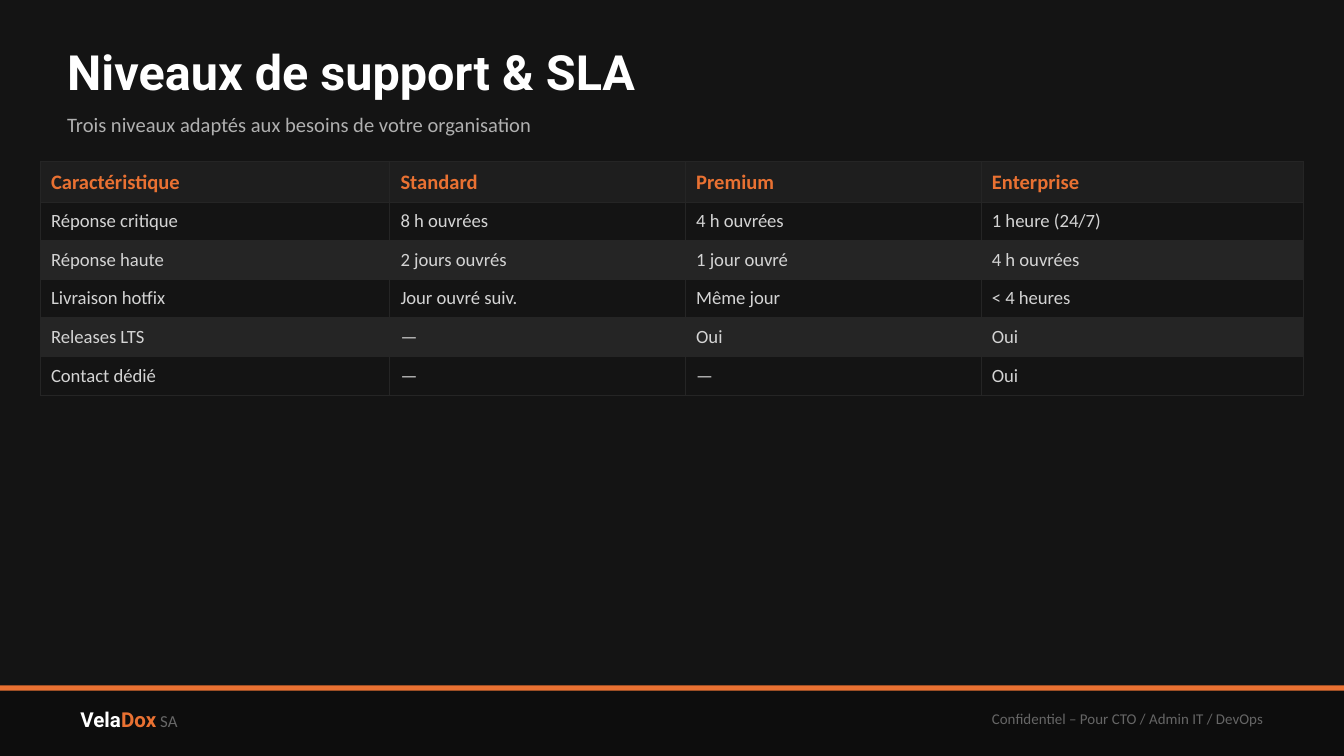
from dataclasses import dataclass

from lxml.etree import SubElement
from pptx import Presentation
from pptx.dml.color import RGBColor
from pptx.enum.shapes import MSO_SHAPE
from pptx.enum.text import MSO_ANCHOR, PP_ALIGN
from pptx.oxml.ns import qn
from pptx.util import Inches, Pt


@dataclass(frozen=True)
class Theme:
    heading: str = "Roboto"
    body: str = "Calibri"
    background: str = "141414"
    footer: str = "0D0D0D"
    header: str = "1E1E1E"
    band: str = "252525"
    accent: str = "E97132"
    white: str = "FFFFFF"
    text: str = "D4D4D4"
    subtitle: str = "B0B0B0"
    muted: str = "666666"
    title_size: float = 26
    lead_size: float = 11
    cell_size: float = 10
    suffix_size: float = 9
    note_size: float = 8
    border: float = 0.5


class SlideBuilder:
    def __init__(self, slide, theme):
        self.slide = slide
        self.theme = theme
        self.fill(slide.background, theme.background)

    def fill(self, target, color):
        target.fill.solid()
        target.fill.fore_color.rgb = RGBColor.from_string(color)

    def run(self, p, text, size, color, font=None, bold=False):
        r = p.add_run()
        r.text = text
        r.font.name = font or self.theme.body
        r.font.size = Pt(size)
        r.font.bold = bold
        r.font.color.rgb = RGBColor.from_string(color)

    def bar(self, top, height, color):
        sp = self.slide.shapes.add_shape(
            MSO_SHAPE.RECTANGLE, 0, Inches(top), Inches(WIDTH), Inches(height))
        sp.shadow.inherit = False
        self.fill(sp, color)
        sp.line.fill.background()

    def text(self, box, runs, align=PP_ALIGN.LEFT, flush=False):
        tf = self.slide.shapes.add_textbox(*map(Inches, box)).text_frame
        tf.word_wrap = True
        tf.vertical_anchor = MSO_ANCHOR.MIDDLE
        if flush:
            tf.margin_left = tf.margin_right = tf.margin_top = tf.margin_bottom = 0
        p = tf.paragraphs[0]
        p.alignment = align
        for run in runs:
            self.run(p, *run)

    def borders(self, cell):
        tc_pr = cell._tc.get_or_add_tcPr()
        for side in ("lnL", "lnR", "lnT", "lnB"):
            ln = SubElement(tc_pr, qn(f"a:{side}"), w=str(Pt(self.theme.border)))
            solid = SubElement(ln, qn("a:solidFill"))
            SubElement(solid, qn("a:srgbClr"), val=self.theme.band)

    def cell(self, cell, text, row):
        t = self.theme
        cell.margin_left = cell.margin_right = Inches(0.08)
        cell.margin_top = cell.margin_bottom = Inches(0.06)
        cell.vertical_anchor = MSO_ANCHOR.MIDDLE
        self.borders(cell)
        p = cell.text_frame.paragraphs[0]
        if row == 0:
            self.fill(cell, t.header)
            self.run(p, text, t.lead_size, t.accent, bold=True)
        else:
            self.fill(cell, t.background if row % 2 else t.band)
            self.run(p, text, t.cell_size, t.text)

    def table(self, left, top, widths, rows, header_height, row_height):
        heights = [header_height] + [row_height] * (len(rows) - 1)
        table = self.slide.shapes.add_table(
            len(rows), len(widths), Inches(left), Inches(top),
            Inches(sum(widths)), Inches(sum(heights))).table
        for column, width in zip(table.columns, widths):
            column.width = Inches(width)
        for i, (values, height) in enumerate(zip(rows, heights)):
            table.rows[i].height = Inches(height)
            for j, value in enumerate(values):
                self.cell(table.cell(i, j), value, i)


WIDTH = 10
HEIGHT = WIDTH * 9 / 16
FOOTER_TOP = 5.1
SLA_ROWS = [
    ("Caractéristique", "Standard", "Premium", "Enterprise"),
    ("Réponse critique", "8 h ouvrées", "4 h ouvrées", "1 heure (24/7)"),
    ("Réponse haute", "2 jours ouvrés", "1 jour ouvré", "4 h ouvrées"),
    ("Livraison hotfix", "Jour ouvré suiv.", "Même jour", "< 4 heures"),
    ("Releases LTS", "—", "Oui", "Oui"),
    ("Contact dédié", "—", "—", "Oui"),
]


def main():
    prs = Presentation()
    prs.slide_width, prs.slide_height = Inches(WIDTH), Inches(HEIGHT)
    t = Theme()
    s = SlideBuilder(prs.slides.add_slide(prs.slide_layouts[6]), t)

    s.bar(FOOTER_TOP, HEIGHT - FOOTER_TOP, t.footer)
    s.bar(FOOTER_TOP, 0.04, t.accent)
    s.text((0.5, 5.15, 3, 0.4), [
        ("Vela", t.lead_size, t.white, t.heading, True),
        ("Dox", t.lead_size, t.accent, t.heading, True),
        (" SA", t.suffix_size, t.muted),
    ])
    s.text((5.5, 5.15, 4, 0.4),
           [("Confidentiel – Pour CTO / Admin IT / DevOps", t.note_size, t.muted)],
           PP_ALIGN.RIGHT)
    s.text((0.5, 0.25, 9, 0.55),
           [("Niveaux de support & SLA", t.title_size, t.white, t.heading, True)],
           flush=True)
    s.text((0.5, 0.75, 9, 0.35),
           [("Trois niveaux adaptés aux besoins de votre organisation",
             t.lead_size, t.subtitle)],
           flush=True)
    s.table(0.3, 1.2, (2.6, 2.2, 2.2, 2.4), SLA_ROWS, 0.3, 0.28)

    prs.save("out.pptx")


if __name__ == "__main__":
    main()
